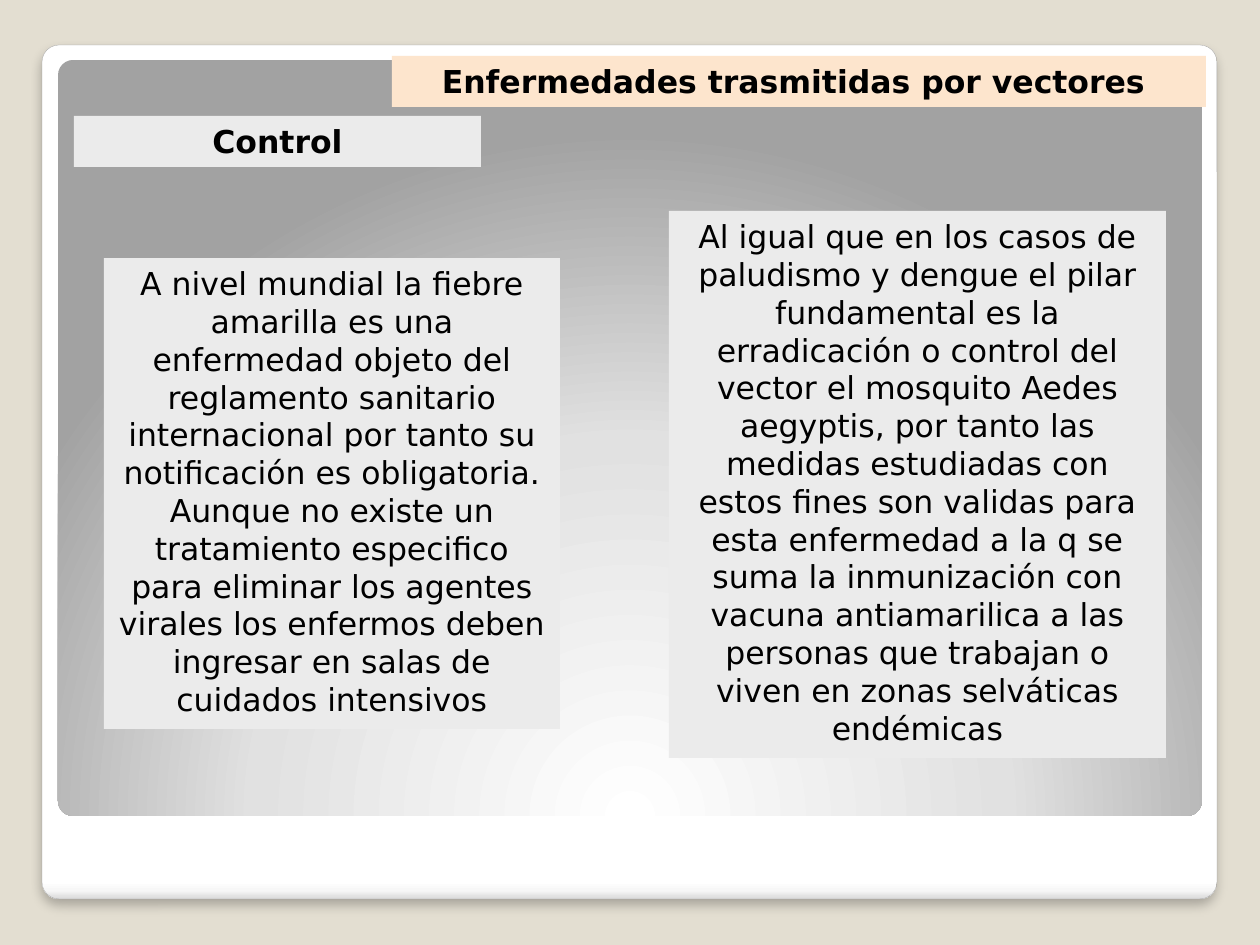
import pptx
import pptx.util
import pptx.dml.color
import pptx.enum.shapes
import pptx.enum.text
import pptx.oxml
import pptx.oxml.ns

PX = 914400 // 126
COLORS = {
    "backdrop": "E3DED1",
    "edge": "A4A4A4",
    "note": "EBEBEB",
    "title": "FDE5CD",
    "text": "000000",
}
CARD_STOPS = [(0, "FFFFFF"), (98, "FFFFFF"), (99, "F7F7F7"), (100, "DADADA")]
GLOW_STOPS = [(0, "FFFFFF"), (55, "E1E1E1"), (100, "A2A2A2")]
DOWNWARD = '<a:lin ang="5400000" scaled="0"/>'
FROM_BOTTOM = ('<a:path path="circle"><a:fillToRect l="50000" t="175000" '
               'r="50000" b="-75000"/></a:path>')
SOFT_SHADOW = (
    '<a:effectLst %s><a:outerShdw blurRad="76200" dist="50800" dir="5400000" '
    'algn="tl" rotWithShape="0"><a:srgbClr val="000000"><a:alpha val="25000"/>'
    '</a:srgbClr></a:outerShdw></a:effectLst>' % pptx.oxml.ns.nsdecls("a"))

LEFT_NOTE = (
    "A nivel mundial la fiebre amarilla es una enfermedad objeto del reglamento "
    "sanitario internacional por tanto su notificación es obligatoria. Aunque no "
    "existe un tratamiento especifico para eliminar los agentes virales los "
    "enfermos deben ingresar en salas de cuidados intensivos")
RIGHT_NOTE = (
    "Al igual que en los casos de paludismo y dengue el pilar fundamental es la "
    "erradicación o control del vector el mosquito Aedes aegyptis, por tanto las "
    "medidas estudiadas con estos fines son validas para esta enfermedad a la q "
    "se suma la inmunización con vacuna antiamarilica a las personas que trabajan "
    "o viven en zonas selváticas endémicas")


def px(length):
    return pptx.util.Emu(length * PX)


def color(name):
    return pptx.dml.color.RGBColor.from_string(COLORS[name])


def add_panel(page, left, top, width, height, stops, direction):
    """Add a rounded panel with a gradient fill and no line."""
    panel = page.shapes.add_shape(
        pptx.enum.shapes.MSO_SHAPE.ROUNDED_RECTANGLE,
        px(left), px(top), px(width), px(height))
    panel.adjustments[0] = 0.02
    panel.shadow.inherit = False
    panel.line.fill.background()
    marks = "".join(
        f'<a:gs pos="{share * 1000}"><a:srgbClr val="{shade}"/></a:gs>'
        for share, shade in stops)
    gradient = pptx.oxml.parse_xml(
        f'<a:gradFill {pptx.oxml.ns.nsdecls("a")} rotWithShape="1">'
        f'<a:gsLst>{marks}</a:gsLst>{direction}</a:gradFill>')
    panel._element.spPr.find(pptx.oxml.ns.qn("a:prstGeom")).addnext(gradient)
    return panel


def add_card(page, left, top, width, height):
    """Add the white card with a thin edge and a soft shadow."""
    card = add_panel(page, left, top, width, height, CARD_STOPS, DOWNWARD)
    card.line.color.rgb = color("edge")
    card.line.width = pptx.util.Pt(0.16)
    effects = card._element.spPr.find(pptx.oxml.ns.qn("a:effectLst"))
    effects.getparent().replace(effects, pptx.oxml.parse_xml(SOFT_SHADOW))


def add_label(page, left, top, width, height, text, fill="note", bold=False):
    """Add a filled text box with centred text."""
    box = page.shapes.add_textbox(px(left), px(top), px(width), px(height))
    box.fill.solid()
    box.fill.fore_color.rgb = color(fill)
    frame = box.text_frame
    frame.word_wrap = True
    frame.auto_size = pptx.enum.text.MSO_AUTO_SIZE.SHAPE_TO_FIT_TEXT
    para = frame.paragraphs[0]
    para.alignment = pptx.enum.text.PP_ALIGN.CENTER
    span = para.add_run()
    span.text = text
    span.font.name = "DejaVu Sans"
    span.font.size = pptx.util.Pt(18)
    span.font.bold = bold
    span.font.color.rgb = color("text")


def main():
    deck = pptx.Presentation()
    deck.slide_width, deck.slide_height = px(1260), px(945)
    page = deck.slides.add_slide(deck.slide_layouts[6])

    # Backdrop, card and glowing panel
    page.background.fill.solid()
    page.background.fill.fore_color.rgb = color("backdrop")
    add_card(page, 42, 45, 1175, 854)
    add_panel(page, 58, 60, 1144, 756, GLOW_STOPS, FROM_BOTTOM)

    # Notes and headings
    add_label(page, 104, 258, 456, 471, LEFT_NOTE)
    add_label(page, 74, 116, 407, 51, "Control", bold=True)
    add_label(page, 392, 56, 814, 51, "Enfermedades trasmitidas por vectores ",
              fill="title", bold=True)
    add_label(page, 669, 211, 497, 547, RIGHT_NOTE)

    deck.save("out.pptx")


if __name__ == "__main__":
    main()
